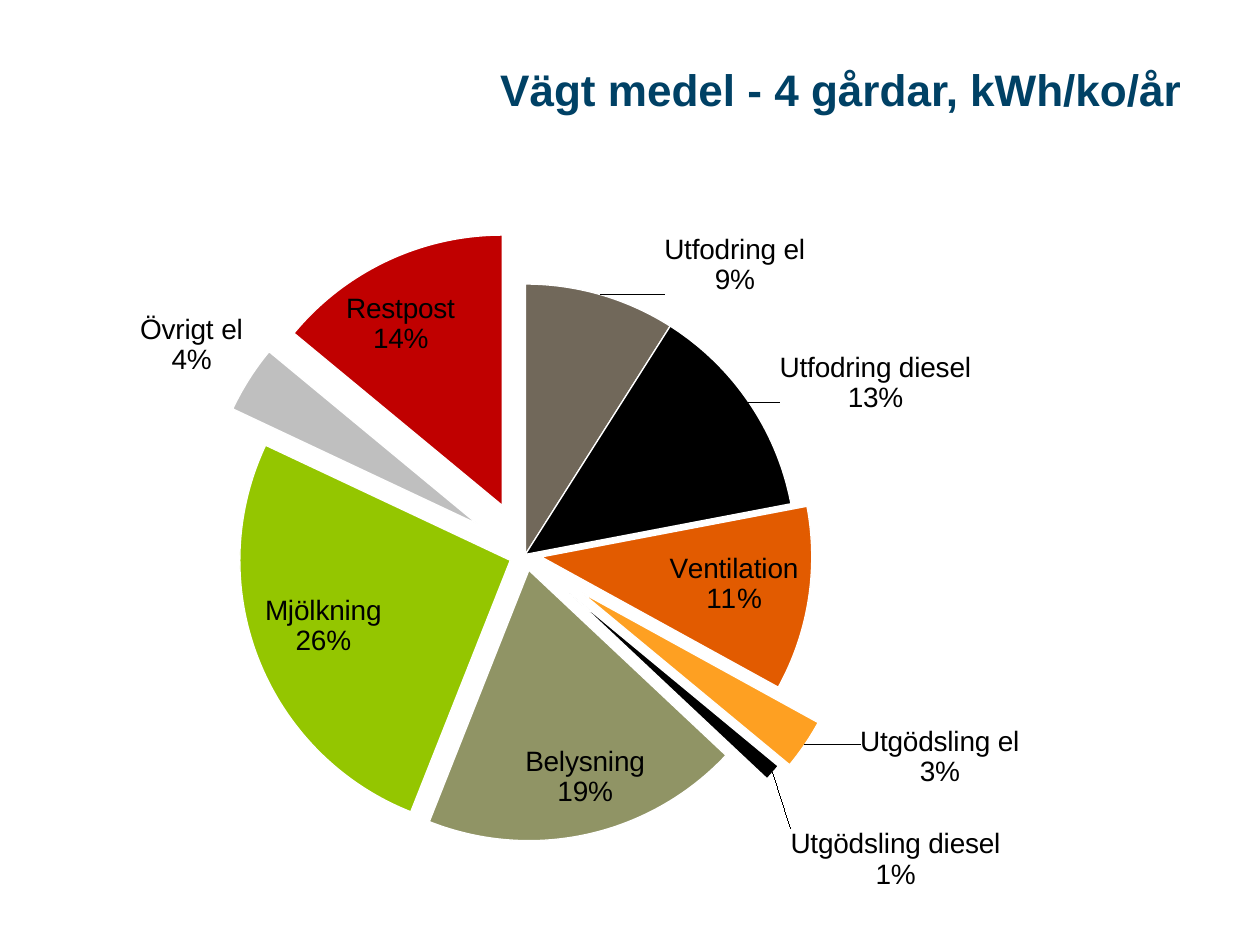
from lxml.etree import SubElement
from pptx import Presentation
from pptx.chart.data import CategoryChartData
from pptx.dml.color import RGBColor
from pptx.enum.chart import XL_CHART_TYPE, XL_LABEL_POSITION
from pptx.enum.text import MSO_ANCHOR, PP_ALIGN
from pptx.oxml.ns import qn
from pptx.util import Emu, Pt

HEADING = "Vägt medel - 4 gårdar, kWh/ko/år"
# Energy use: share in %, slice colour, explosion in %
USES = [
    ("Utfodring el", 9, "71685A", 0),
    ("Utfodring diesel", 13, "000000", 0),
    ("Ventilation", 11, "E25B00", 6),
    ("Utgödsling el", 3, "FEA022", 25),
    ("Utgödsling diesel", 1, "000000", 22),
    ("Belysning", 19, "909465", 6),
    ("Mjölkning", 26, "94C600", 6),
    ("Övrigt el", 4, "BFBFBF", 21),
    ("Övrigt diesel", 0, "FF6700", 6),
    ("Restpost", 14, "C00000", 20),
]
# Labels moved away from their slice, in px
LABEL_SHIFTS = {0: (66, 7), 1: (26, 16), 3: (49, -24), 4: (15, 54)}
UNLABELLED = 8
SERIES_EXPLOSION = 6
CHART_BOX = (15, 165, 1230, 735)
PLOT_LAYOUT = {"x": 0.17, "y": 0.14, "w": 0.49, "h": 0.78}


def px(n):
    return Emu(round(n * 914400 / 126))


def rgb(value):
    return RGBColor.from_string(value)


def place(shape, left, top, width, height):
    shape.left, shape.top = px(left), px(top)
    shape.width, shape.height = px(width), px(height)


def add_value(parent, tag, value):
    child = SubElement(parent, qn(f"c:{tag}"))
    child.set("val", str(value))
    return child


def add_layout(parent, index, fractions, inner=False):
    for old in parent.findall(qn("c:layout")):
        parent.remove(old)
    layout = SubElement(parent, qn("c:layout"))
    parent.insert(index, layout)
    manual = SubElement(layout, qn("c:manualLayout"))
    if inner:
        add_value(manual, "layoutTarget", "inner")
        add_value(manual, "xMode", "edge")
        add_value(manual, "yMode", "edge")
    for tag, fraction in fractions.items():
        add_value(manual, tag, fraction)


def show_name_and_percent(label):
    for tag, shown in (("showVal", 0), ("showCatName", 1), ("showPercent", 1)):
        label.find(qn(f"c:{tag}")).set("val", str(shown))
    separator = SubElement(label, qn("c:separator"))
    separator.text = "\n"
    label.find(qn("c:showBubbleSize")).addnext(separator)


deck = Presentation()
deck.slide_width, deck.slide_height = px(1260), px(945)
slide = deck.slides.add_slide(deck.slide_layouts[5])

# Title
title = slide.shapes.title
place(title, 123, 55, 1071, 68)
frame = title.text_frame
frame.word_wrap = True
frame.vertical_anchor = MSO_ANCHOR.MIDDLE
heading = frame.paragraphs[0]
heading.alignment = PP_ALIGN.RIGHT
run = heading.add_run()
run.text = HEADING
run.font.name, run.font.size, run.font.bold = "Arial", Pt(25.2), True
run.font.color.rgb = rgb("004165")

# Pie chart
energy = CategoryChartData(number_format="0")
energy.categories = [use[0] for use in USES]
energy.add_series("Series 1", [use[1] for use in USES])
pie = slide.shapes.add_chart(
    XL_CHART_TYPE.PIE, *[px(n) for n in CHART_BOX], energy).chart
pie.has_legend = pie.has_title = False
pie.font.name, pie.font.size = "Arial", Pt(16)
pie.font.color.rgb = rgb("000000")
plot = pie.plots[0]
plot.vary_by_categories = True
plot_area = pie.element.find(".//" + qn("c:plotArea"))
add_layout(plot_area, 0, PLOT_LAYOUT, inner=True)

# Slices
shares = plot.series[0]
shares_xml = plot_area.find(".//" + qn("c:ser"))
for index, (_, _, colour, explosion) in enumerate(USES):
    slice_format = shares.points[index].format
    slice_format.fill.solid()
    slice_format.fill.fore_color.rgb = rgb(colour)
    slice_format.line.color.rgb = rgb("FFFFFF")
    slice_format.line.width = Pt(0.75)
    slice_xml = shares_xml.findall(qn("c:dPt"))[index]
    slice_xml.find(qn("c:spPr")).addprevious(
        add_value(slice_xml, "explosion", explosion))
shares_xml.find(qn("c:dPt")).addprevious(
    add_value(shares_xml, "explosion", SERIES_EXPLOSION))

# Labels
labels = shares.data_labels
labels.number_format, labels.number_format_is_linked = "0%", False
labels.position = XL_LABEL_POSITION.BEST_FIT
labels_xml = shares_xml.find(qn("c:dLbls"))
show_name_and_percent(labels_xml)
for index, (right, down) in LABEL_SHIFTS.items():
    shares.points[index].data_label.position = XL_LABEL_POSITION.OUTSIDE_END
    label = labels_xml.findall(qn("c:dLbl"))[-1]
    show_name_and_percent(label)
    add_layout(label, 1, {"x": round(right / CHART_BOX[2], 2),
                          "y": round(down / CHART_BOX[3], 2)})
hidden = SubElement(labels_xml, qn("c:dLbl"))
add_value(hidden, "idx", UNLABELLED)
add_value(hidden, "delete", 1)
labels_xml.findall(qn("c:dLbl"))[-2].addnext(hidden)

deck.save("out.pptx")
